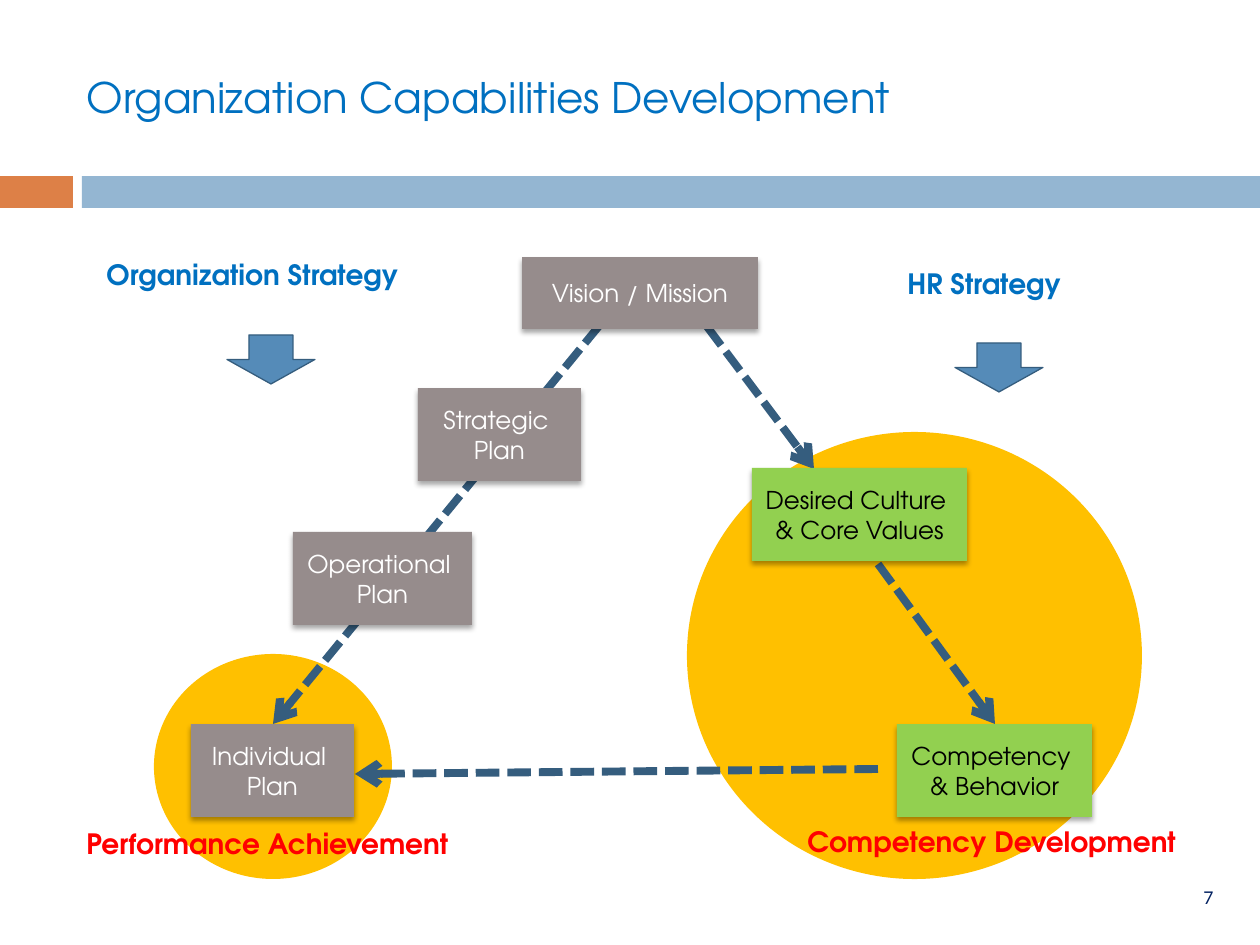
"""Build the Organization Capabilities Development slide."""
from dataclasses import dataclass

from lxml import etree
from pptx import Presentation
from pptx.dml.color import RGBColor
from pptx.enum.dml import MSO_LINE
from pptx.enum.shapes import MSO_CONNECTOR, MSO_SHAPE
from pptx.enum.text import MSO_ANCHOR, MSO_AUTO_SIZE, PP_ALIGN
from pptx.oxml.ns import qn
from pptx.util import Emu, Pt

RECTANGLE, OVAL, DOWN_ARROW = MSO_SHAPE.RECTANGLE, MSO_SHAPE.OVAL, MSO_SHAPE.DOWN_ARROW
STRAIGHT, DASHED = MSO_CONNECTOR.STRAIGHT, MSO_LINE.SQUARE_DOT
LEFT, CENTER, MIDDLE = PP_ALIGN.LEFT, PP_ALIGN.CENTER, MSO_ANCHOR.MIDDLE
NO_FIT, GROW = MSO_AUTO_SIZE.NONE, MSO_AUTO_SIZE.SHAPE_TO_FIT_TEXT
PX_PER_INCH = 126


@dataclass(frozen=True)
class Theme:
    font: str = "TeX Gyre Adventor"
    number_font: str = "Lato"
    title_size: int = 24
    label_size: int = 16
    step_size: int = 14
    number_size: int = 10
    orange: str = "DD8047"
    pale_blue: str = "94B6D2"
    gold: str = "FFC000"
    gray: str = "968C8C"
    green: str = "92D050"
    blue: str = "0070C0"
    red: str = "FF0000"
    arrow_fill: str = "558BB8"
    dark_blue: str = "355D7E"
    navy: str = "002060"
    white: str = "FFFFFF"
    black: str = "000000"


theme = Theme()


def px(*lengths):
    return [Emu(round(length * 914400 / PX_PER_INCH)) for length in lengths]


def write(frame, text, size, color, align, bold=False, font=theme.font):
    frame.text = text
    for paragraph in frame.paragraphs:
        paragraph.alignment = align
        paragraph.font.name = font
        paragraph.font.size = Pt(size)
        paragraph.font.bold = bold
        paragraph.font.color.rgb = RGBColor.from_string(color)


prs = Presentation()
prs.slide_width, prs.slide_height = px(1260, 945)
slide = prs.slides.add_slide(prs.slide_layouts[5])
shapes = slide.shapes

title = shapes.title
title.left, title.top, title.width, title.height = px(74, 49, 925, 95)
title.text_frame.vertical_anchor = MIDDLE
title.text_frame.auto_size = NO_FIT
write(title.text_frame, "Organization Capabilities Development",
      theme.title_size, theme.blue, LEFT)

for kind, box, color in [
    (RECTANGLE, (0, 176, 73, 32), theme.orange),
    (RECTANGLE, (82, 176, 1178, 32), theme.pale_blue),
    (OVAL, (687, 432, 455, 447), theme.gold),
    (OVAL, (154, 654, 238, 225), theme.gold),
]:
    backdrop = shapes.add_shape(kind, *px(*box))
    backdrop.shadow.inherit = False
    backdrop.fill.solid()
    backdrop.fill.fore_color.rgb = RGBColor.from_string(color)
    backdrop.line.fill.background()

for ends in [
    (640, 276, 273, 724),
    (669, 276, 814, 469),
    (878, 769, 355, 774),
    (878, 564, 995, 724),
]:
    flow = shapes.add_connector(STRAIGHT, *px(*ends))
    flow.line.color.rgb = RGBColor.from_string(theme.dark_blue)
    flow.line.width = Pt(4.5)
    flow.line.dash_style = DASHED
    properties = flow.element.spPr
    etree.SubElement(properties.find(qn("a:ln")), qn("a:tailEnd"), type="arrow")
    etree.SubElement(properties, qn("a:effectLst"))

for text, box, fill, color in [
    ("Vision / Mission", (522, 257, 236, 72), theme.gray, theme.white),
    ("Strategic \nPlan", (418, 388, 163, 93), theme.gray, theme.white),
    ("Operational \nPlan", (293, 532, 179, 93), theme.gray, theme.white),
    ("Individual \nPlan", (191, 724, 163, 93), theme.gray, theme.white),
    ("Desired Culture \n& Core Values", (752, 468, 215, 93), theme.green, theme.black),
    ("Competency \n& Behavior", (897, 724, 195, 93), theme.green, theme.black),
]:
    step = shapes.add_shape(RECTANGLE, *px(*box))
    step.shadow.inherit = False
    step.fill.solid()
    step.fill.fore_color.rgb = RGBColor.from_string(fill)
    step.line.fill.background()
    step.text_frame.vertical_anchor = MIDDLE
    write(step.text_frame, text, theme.step_size, color, CENTER)
    effects = step.element.spPr.find(qn("a:effectLst"))
    shadow = etree.SubElement(effects, qn("a:outerShdw"), blurRad=str(Pt(3)),
                              dist=str(Pt(2)), dir="5400000", rotWithShape="0")
    shade = etree.SubElement(shadow, qn("a:srgbClr"), val=theme.black)
    etree.SubElement(shade, qn("a:alpha"), val="35000")

for text, box, color in [
    ("Organization Strategy", (94, 251, 322, 47), theme.blue),
    ("HR Strategy", (895, 260, 181, 47), theme.blue),
    ("Performance Achievement", (74, 820, 396, 47), theme.red),
    ("Competency Development", (795, 818, 401, 47), theme.red),
]:
    label = shapes.add_textbox(*px(*box)).text_frame
    label.word_wrap = False
    label.auto_size = GROW
    write(label, text, theme.label_size, color, LEFT, bold=True)

for left, top in [(227, 335), (955, 343)]:
    pointer = shapes.add_shape(DOWN_ARROW, *px(left, top, 88, 49))
    pointer.shadow.inherit = False
    pointer.fill.solid()
    pointer.fill.fore_color.rgb = RGBColor.from_string(theme.arrow_fill)
    pointer.line.color.rgb = RGBColor.from_string(theme.dark_blue)
    pointer.line.width = Pt(0.75)

page_number = shapes.add_textbox(*px(1172, 880, 73, 34)).text_frame
page_number.word_wrap = True
page_number.vertical_anchor = MIDDLE
write(page_number, "7", theme.number_size, theme.navy, CENTER, font=theme.number_font)

prs.save("out.pptx")
